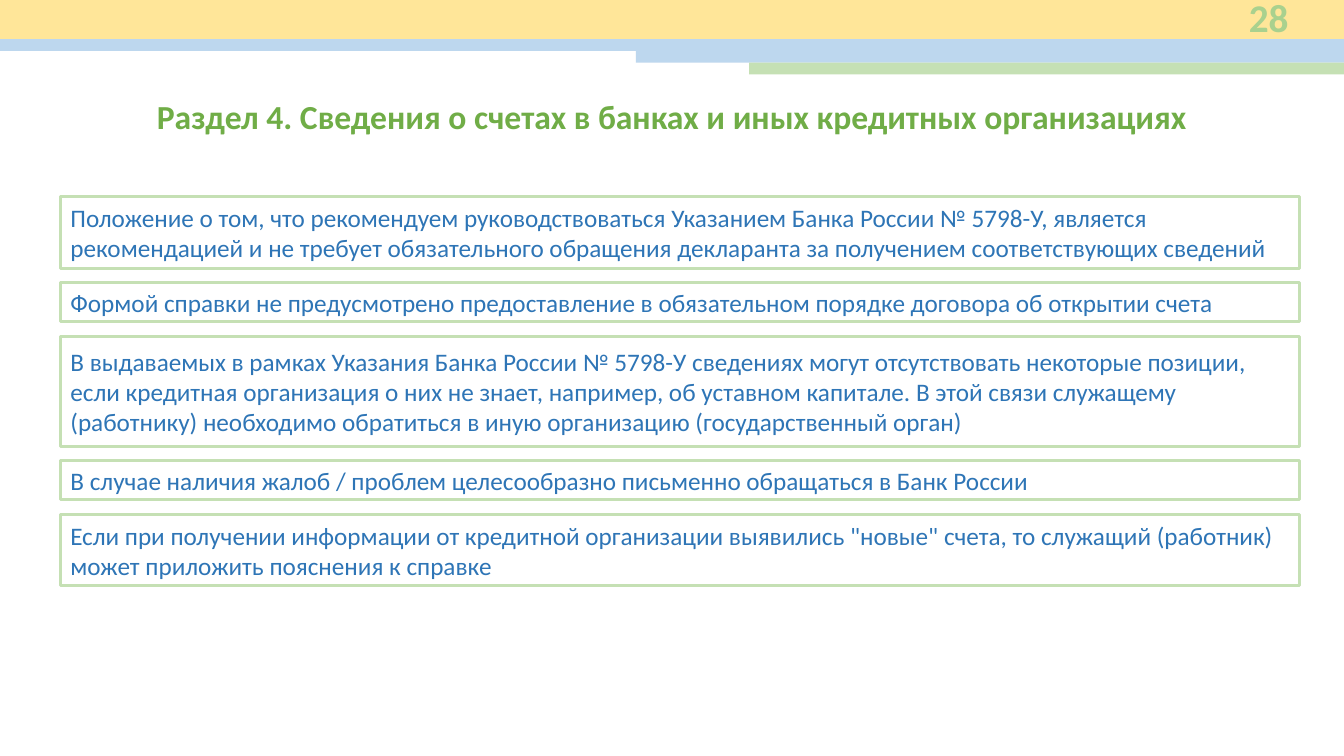
from dataclasses import dataclass

from pptx import Presentation
from pptx.dml.color import RGBColor as Rgb
from pptx.enum import shapes as sh, text as tx
from pptx.util import Pt


@dataclass(frozen=True)
class Theme:
    """Colours, font and type sizes of the slide."""
    font: str = "Calibri"
    gold: str = "FFE699"
    sky: str = "BDD7EE"
    mint: str = "C5E0B4"
    leaf: str = "A9D18E"
    green: str = "70AD47"
    blue: str = "2E75B6"
    title: int = 24
    body: int = 18
    number: int = 28
    edge: float = 2.25


LOOK = Theme()
WIDE, HIGH = 960, 540
GAP = 10.3
NOTES = [
    (51.1, "Положение о том, что рекомендуем руководствоваться Указанием Банка России № 5798-У, "
           "является рекомендацией и не требует обязательного обращения декларанта за получением "
           "соответствующих сведений"),
    (28.1, "Формой справки не предусмотрено предоставление в обязательном порядке договора "
           "об открытии счета"),
    (78.5, "В выдаваемых в рамках Указания Банка России № 5798-У сведениях могут отсутствовать "
           "некоторые позиции, если кредитная организация о них не знает, например, об уставном "
           "капитале. В этой связи служащему (работнику) необходимо обратиться в иную организацию "
           "(государственный орган)"),
    (28.1, "В случае наличия жалоб / проблем целесообразно письменно обращаться в Банк России"),
    (51.1, "Если при получении информации от кредитной организации выявились \"новые\" счета, "
           "то служащий (работник) может приложить пояснения к справке"),
]


def block(slide, box, fill=None, edge=None):
    """Add a plain rectangle with an optional fill and outline."""
    rect = slide.shapes.add_shape(sh.MSO_SHAPE.RECTANGLE, *map(Pt, box))
    rect.shadow.inherit = False
    if fill:
        rect.fill.solid()
        rect.fill.fore_color.rgb = Rgb.from_string(fill)
    else:
        rect.fill.background()
    if edge:
        rect.line.color.rgb = Rgb.from_string(edge)
        rect.line.width = Pt(LOOK.edge)
    else:
        rect.line.fill.background()
    return rect


def write(shape, words, size, color, align, bold=False, anchor=tx.MSO_ANCHOR.MIDDLE):
    """Fill a shape with one run of styled text."""
    frame = shape.text_frame
    frame.word_wrap = True
    frame.vertical_anchor = anchor
    para = frame.paragraphs[0]
    para.alignment = align
    run = para.add_run()
    run.text = words
    font = run.font
    font.name, font.size, font.bold = LOOK.font, Pt(size), bold
    font.color.rgb = Rgb.from_string(color)


def header(slide, box):
    """Draw the gold band and the stepped strips under it."""
    left, top, width, height = box
    block(slide, box, LOOK.gold)
    step = 8.4
    strips = [(0, LOOK.sky), (454.2, LOOK.sky), (535, LOOK.mint)]
    for row, (inset, fill) in enumerate(strips):
        spot = (left + inset, top + height + row * step, width - inset, step)
        block(slide, spot, fill)


def title(slide, box):
    """Place the centred section title."""
    label = slide.shapes.add_textbox(*map(Pt, box))
    write(label, "Раздел 4. Сведения о счетах в банках и иных кредитных организациях",
          LOOK.title, LOOK.green, tx.PP_ALIGN.CENTER, True, tx.MSO_ANCHOR.TOP)


def notes(slide, box):
    """Stack the outlined statements with equal gaps."""
    left, top, width = box
    for height, words in NOTES:
        card = block(slide, (left, top, width, height), edge=LOOK.mint)
        write(card, words, LOOK.body, LOOK.blue, tx.PP_ALIGN.LEFT)
        top += height + GAP


def number(slide, box):
    """Place the page number on the band."""
    label = slide.shapes.add_textbox(*map(Pt, box))
    write(label, "28", LOOK.number, LOOK.leaf, tx.PP_ALIGN.RIGHT, True)


def main():
    """Build the slide and save it."""
    deck = Presentation()
    deck.slide_width, deck.slide_height = Pt(WIDE), Pt(HIGH)
    slide = deck.slides.add_slide(deck.slide_layouts[6])
    header(slide, (0, 0, WIDE, 28))
    title(slide, (43.2, 64.8, 873.4, 36))
    notes(slide, (43.2, 140.4, 885))
    number(slide, (837.4, -3.6, 90, 31.7))
    deck.save("out.pptx")


if __name__ == "__main__":
    main()
